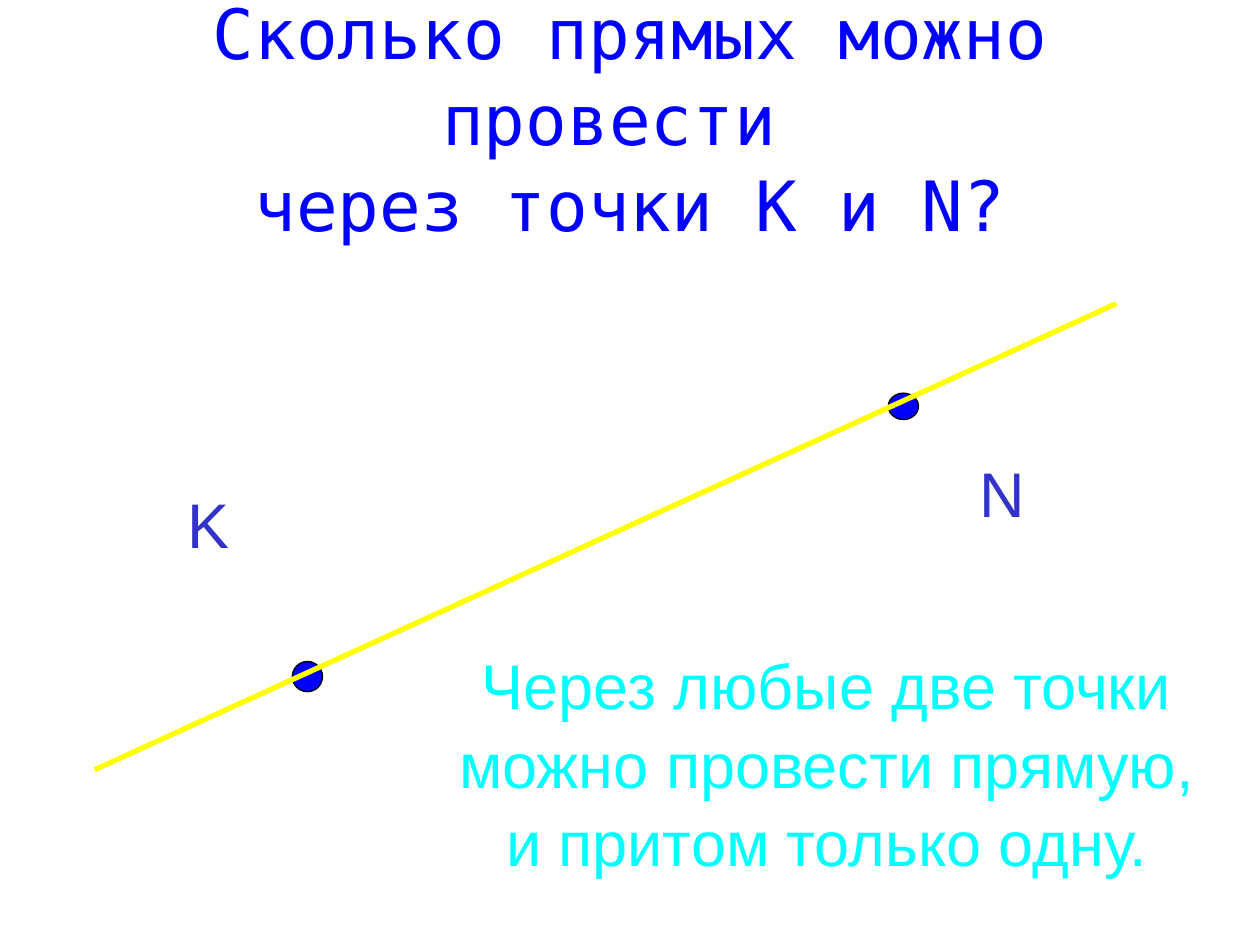
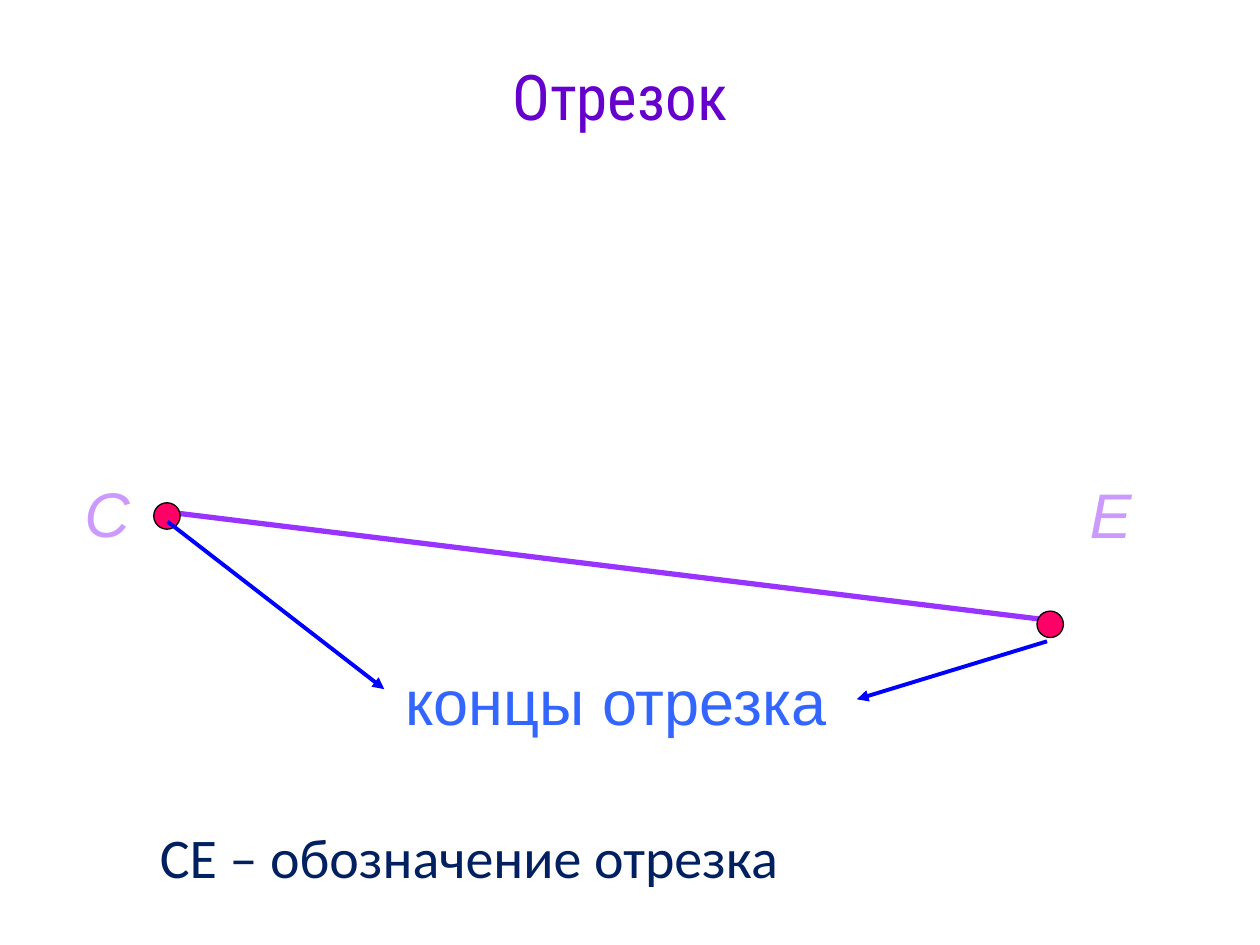
from dataclasses import dataclass

import pptx
import pptx.dml.color
import pptx.enum.shapes
import pptx.enum.text
import pptx.oxml.ns
import pptx.util
from lxml import etree

Inches = pptx.util.Inches
Align = pptx.enum.text.PP_ALIGN
Anchor = pptx.enum.text.MSO_ANCHOR


@dataclass(frozen=True)
class Theme:
    blue: str = "0000FF"
    label_blue: str = "3333CC"
    yellow: str = "FFFF00"
    cyan: str = "00FFFF"
    violet: str = "6600CC"
    segment_violet: str = "9933FF"
    lilac: str = "CC99FF"
    pink: str = "FF0066"
    caption_blue: str = "3366FF"
    navy: str = "002060"
    black: str = "000000"
    title_size: float = 39.6
    text_size: float = 36
    note_size: float = 32
    thick: float = 3
    arrow: float = 2.25
    outline: float = 0.75


THEME = Theme()

# Places are (left, top, width, height) in inches; lines run between (x, y) points.
SLIDES = [
    {
        "title": dict(at=(0.5, 0.3, 9, 1.25),
                      lines=["Сколько прямых можно провести ", "через точки К и N?"],
                      font="DejaVu Sans Mono", size=THEME.title_size, color=THEME.blue,
                      anchor=Anchor.MIDDLE, spacing=1.03, wrap=True, inset=0.05),
        "parts": [
            ("point", dict(at=(2.32, 5.25, 0.24, 0.24), color=THEME.blue)),
            ("point", dict(at=(7.05, 3.12, 0.24, 0.21), color=THEME.blue)),
            ("text", dict(at=(1.38, 3.75, 0.55, 0.81), paras=["K"], color=THEME.label_blue)),
            ("text", dict(at=(7.68, 3.51, 0.55, 0.87), paras=["N"], color=THEME.label_blue)),
            ("line", dict(start=(0.75, 6.11), end=(8.86, 2.41),
                          color=THEME.yellow, width=THEME.thick)),
            ("text", dict(at=(3.5, 5.01, 6.12, 1.72), color=THEME.cyan, spacing=1.04,
                          paras=["Через любые две точки", "можно провести прямую,",
                                 "и притом только одну."])),
        ],
    },
    {
        "title": dict(at=(1.22, 0.36, 7.4, 1.1), lines=["Отрезок"],
                      font="Roboto Condensed", color=THEME.violet),
        "parts": [
            ("line", dict(start=(1.3, 4.06), end=(8.39, 4.93),
                          color=THEME.segment_violet, width=THEME.thick)),
            ("point", dict(at=(1.22, 3.99, 0.21, 0.21), color=THEME.pink)),
            ("point", dict(at=(8.23, 4.85, 0.21, 0.21), color=THEME.pink)),
            ("text", dict(at=(0.59, 3.67, 0.52, 0.94), paras=["С"],
                          color=THEME.lilac, italic=True)),
            ("text", dict(at=(8.54, 3.67, 0.55, 0.81), paras=["Е"],
                          color=THEME.lilac, italic=True)),
            ("text", dict(at=(3.2, 5.16, 3.38, 0.57), paras=["концы отрезка"],
                          color=THEME.caption_blue)),
            ("line", dict(start=(1.33, 4.14), end=(3.05, 5.47),
                          color=THEME.blue, width=THEME.arrow, arrow=True)),
            ("line", dict(start=(8.31, 5.09), end=(6.8, 5.55),
                          color=THEME.blue, width=THEME.arrow, arrow=True)),
            ("text", dict(at=(1.17, 6.48, 5.16, 0.64), paras=["СЕ – обозначение отрезка"],
                          font="Calibri", size=THEME.note_size, color=THEME.navy,
                          align=Align.LEFT, inset=0.05)),
        ],
    },
]


def rgb(value):
    return pptx.dml.color.RGBColor.from_string(value)


def fill_text(shape, paras, color, font="Arial", size=THEME.text_size, italic=False,
              align=Align.CENTER, anchor=Anchor.TOP, spacing=1.0, wrap=False, inset=0.1):
    """Write paragraphs, each a list of lines, in one style."""
    frame = shape.text_frame
    frame.auto_size = pptx.enum.text.MSO_AUTO_SIZE.NONE
    frame.word_wrap = wrap
    frame.vertical_anchor = anchor
    frame.margin_left = frame.margin_right = Inches(0.1)
    frame.margin_top = frame.margin_bottom = Inches(inset)
    for index, lines in enumerate(paras):
        para = frame.add_paragraph() if index else frame.paragraphs[0]
        para.alignment = align
        para.line_spacing = spacing
        for number, line in enumerate(lines):
            if number:
                para.add_line_break()
            span = para.add_run()
            span.text = line
            span.font.name = font
            span.font.size = pptx.util.Pt(size)
            span.font.italic = italic
            span.font.color.rgb = rgb(color)


def set_title(page, at, lines, **style):
    title = page.shapes.title
    title.left, title.top, title.width, title.height = map(Inches, at)
    fill_text(title, [lines], **style)


def add_text(page, at, paras, **style):
    box = page.shapes.add_textbox(*map(Inches, at))
    fill_text(box, [[para] for para in paras], **style)


def add_point(page, at, color):
    point = page.shapes.add_shape(pptx.enum.shapes.MSO_SHAPE.OVAL, *map(Inches, at))
    point.shadow.inherit = False
    point.fill.solid()
    point.fill.fore_color.rgb = rgb(color)
    point.line.color.rgb = rgb(THEME.black)
    point.line.width = pptx.util.Pt(THEME.outline)


def add_line(page, start, end, color, width, arrow=False):
    line = page.shapes.add_connector(pptx.enum.shapes.MSO_CONNECTOR.STRAIGHT,
                                     *map(Inches, start + end))
    line.line.color.rgb = rgb(color)
    line.line.width = pptx.util.Pt(width)
    qn = pptx.oxml.ns.qn
    if arrow:
        etree.SubElement(line.line._get_or_add_ln(), qn("a:tailEnd"), type="triangle")
    etree.SubElement(line._element.spPr, qn("a:effectLst"))


ADD = {"text": add_text, "point": add_point, "line": add_line}


def main():
    deck = pptx.Presentation()
    deck.slide_width, deck.slide_height = Inches(10), Inches(7.5)
    for content in SLIDES:
        page = deck.slides.add_slide(deck.slide_layouts[5])
        set_title(page, **content["title"])
        for kind, part in content["parts"]:
            ADD[kind](page, **part)
    deck.save("out.pptx")


if __name__ == "__main__":
    main()
